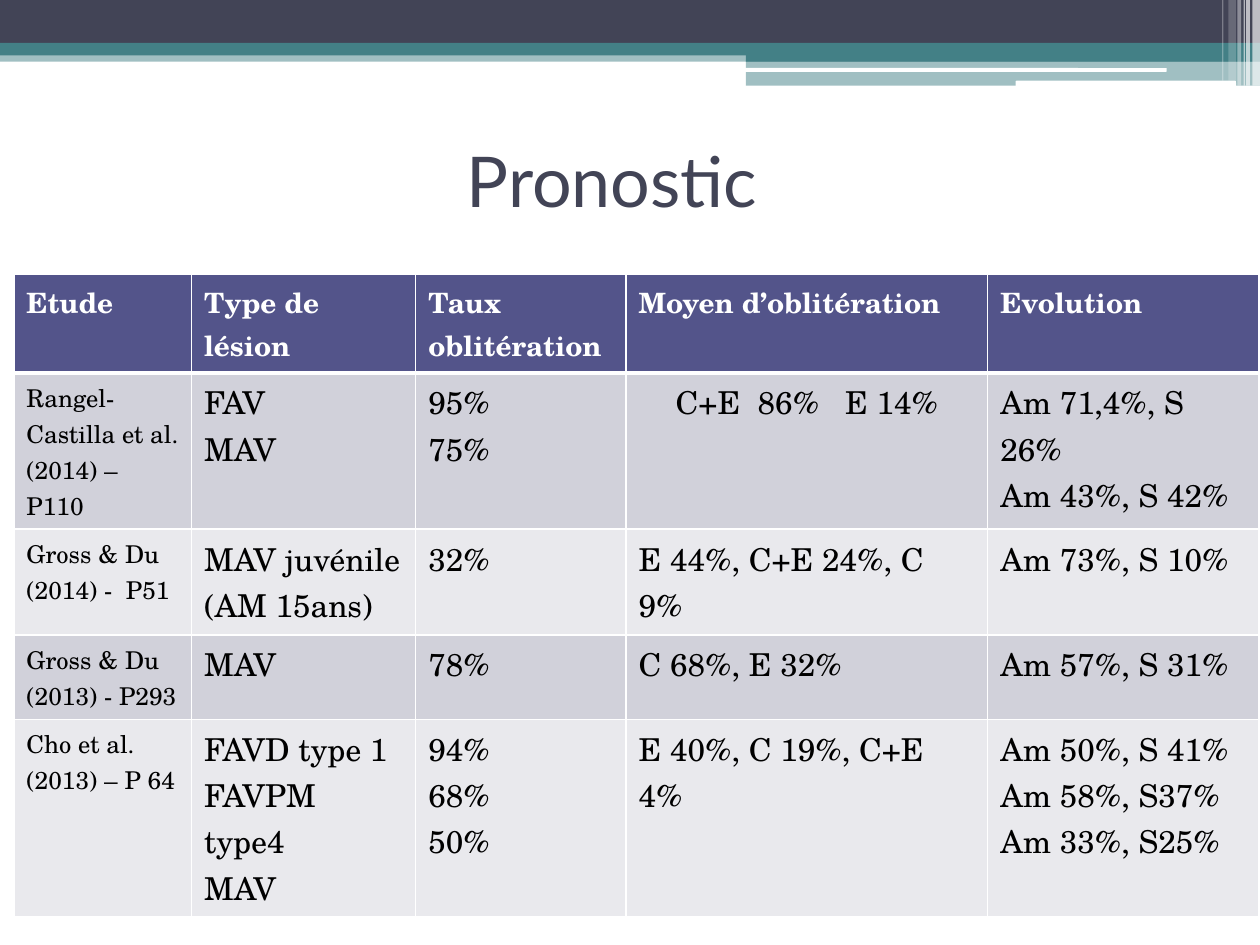
"""Build the "Pronostic" slide: a banded header and a table of study outcomes."""
from lxml import etree
from pptx import Presentation
from pptx import util as u
from pptx.dml import color
from pptx.enum import shapes, text
from pptx.oxml import ns

COLORS = {
    "navy": "424456", "teal": "438086", "white": "FFFFFF", "black": "000000",
    "header": "53548A", "dark band": "D1D1DA", "light band": "E9E9ED",
}
TITLE_FONT, TABLE_FONT = "Lato", "TeX Gyre Schola"


def add_text(frame, lines, alignment, color_name, **font_format):
    for index, line in enumerate(lines):
        paragraph = frame.paragraphs[0] if index == 0 else frame.add_paragraph()
        paragraph.alignment = alignment
        run = paragraph.add_run()
        run.text = line
        for name, value in font_format.items():
            setattr(run.font, name, value)
        run.font.color.rgb = color.RGBColor.from_string(COLORS[color_name])


def add_border(cell, side, width):
    line = etree.SubElement(cell._tc.get_or_add_tcPr(), ns.qn(f"a:ln{side}"), w=str(u.Pt(width)))
    fill = etree.SubElement(line, ns.qn("a:solidFill"))
    etree.SubElement(fill, ns.qn("a:srgbClr"), val=COLORS["white"])


presentation = Presentation()
presentation.slide_width, presentation.slide_height = u.Inches(10), u.Inches(7.5)
slide = presentation.slides.add_slide(presentation.slide_layouts[6])

RECTANGLE, ROUNDED = shapes.MSO_SHAPE.RECTANGLE, shapes.MSO_SHAPE.ROUNDED_RECTANGLE
bands = [
    (RECTANGLE, 0, 0.4, 10, 0.09, "teal", 50),
    (RECTANGLE, 0, 0, 10, 0.34, "navy", 100),
    (RECTANGLE, 0, 0.34, 10, 0.1, "teal", 100),
    (RECTANGLE, 5.92, 0.39, 4.08, 0.1, "teal", 100),
    (RECTANGLE, 5.92, 0.48, 4.08, 0.2, "teal", 50),
    (ROUNDED, 5.91, 0.54, 3.35, 0.03, "white", 100),
    (ROUNDED, 8.06, 0.64, 1.75, 0.05, "white", 100),
]
stripes = [
    (9.94, 0.06, 0.68, 65), (9.89, 0.03, 0.68, 65), (9.87, 0.01, 0.68, 60),
    (9.82, 0.03, 0.68, 40), (9.75, 0.06, 0.64, 20), (9.7, 0.01, 0.64, 30),
]
bands += [(RECTANGLE, left, 0, width, height, "white", opacity)
          for left, width, height, opacity in stripes]
for kind, left, top, width, height, color_name, opacity in bands:
    shape = slide.shapes.add_shape(kind, *map(u.Inches, (left, top, width, height)))
    shape.shadow.inherit = False
    shape.line.fill.background()
    shape.fill.solid()
    shape.fill.fore_color.rgb = color.RGBColor.from_string(COLORS[color_name])
    if opacity < 100:
        fill_color = shape._element.spPr.find(f".//{ns.qn('a:srgbClr')}")
        etree.SubElement(fill_color, ns.qn("a:alpha"), val=str(opacity * 1000))

title = slide.shapes.add_textbox(*map(u.Inches, (0.43, 0.84, 9, 1.17)))
title.text_frame.word_wrap = True
title.text_frame.vertical_anchor = text.MSO_ANCHOR.MIDDLE
add_text(title.text_frame, ["Pronostic "], text.PP_ALIGN.CENTER, "navy",
         name=TITLE_FONT, size=u.Pt(40))

studies = [
    ["Etude", "Type de lésion", "Taux oblitération", "Moyen d’oblitération", "Evolution"],
    ["Rangel-Castilla et al. (2014) – P110", "FAV\nMAV", "95%\n75%",
     "C+E  86%   E 14%", "Am 71,4%, S 26%\nAm 43%, S 42%"],
    ["Gross & Du (2014) -  P51", "MAV juvénile (AM 15ans)", "32%",
     "E 44%, C+E 24%, C 9%", "Am 73%, S 10%"],
    ["Gross & Du (2013) - P293", "MAV", "78%", "C 68%, E 32%", "Am 57%, S 31%"],
    ["Cho et al. (2013) – P 64", "FAVD type 1\nFAVPM type4\nMAV", "94%\n68%\n50%",
     "E 40%, C 19%, C+E 4%", "Am 50%, S 41%\nAm 58%, S37%\nAm 33%, S25%"],
]
column_widths = [1.41, 1.78, 1.67, 2.87, 2.15]
row_heights = [0.78, 1.24, 0.84, 0.67, 1.57]
table = slide.shapes.add_table(
    len(studies), len(column_widths), u.Inches(0.11), u.Inches(2.18),
    u.Inches(sum(column_widths)), u.Inches(sum(row_heights))).table
for column, width in zip(table.columns, column_widths):
    column.width = u.Inches(width)

for row_index, study in enumerate(studies):
    table.rows[row_index].height = u.Inches(row_heights[row_index])
    is_header = row_index == 0
    band = "header" if is_header else "dark band" if row_index % 2 else "light band"
    for column_index, content in enumerate(study):
        cell = table.cell(row_index, column_index)
        size = 16 if is_header else 14 if column_index == 0 else 18
        centered = (row_index, column_index) == (1, 3)
        add_text(cell.text_frame, content.split("\n"),
                 text.PP_ALIGN.CENTER if centered else text.PP_ALIGN.LEFT,
                 "white" if is_header else "black",
                 name=TABLE_FONT, size=u.Pt(size), bold=is_header)
        for side in "LRTB":
            under_header = (row_index, side) in [(0, "B"), (1, "T")]
            add_border(cell, side, 3 if under_header else 1)
        cell.fill.solid()
        cell.fill.fore_color.rgb = color.RGBColor.from_string(COLORS[band])

presentation.save("out.pptx")
